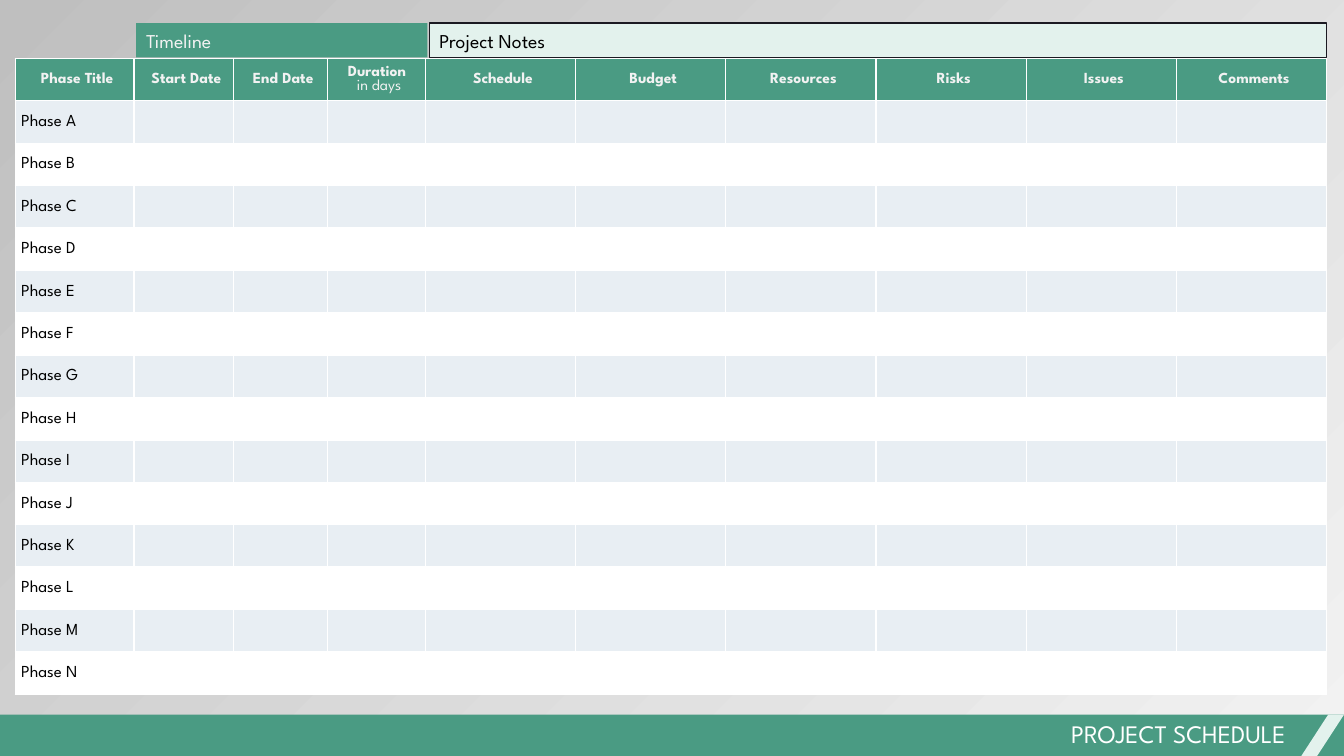
from pptx import Presentation
from pptx.dml.color import RGBColor
from pptx.enum.shapes import MSO_SHAPE as SHAPE
from pptx.enum.text import MSO_ANCHOR as ANCHOR, MSO_AUTO_SIZE as AUTO_SIZE, PP_ALIGN as ALIGN
from pptx.oxml.ns import qn
from pptx.util import Inches, Pt
from lxml.etree import SubElement

COLORS = {
    "green": "4A9B83",
    "mint": "E3F2ED",
    "band": "E8EEF3",
    "white": "FFFFFF",
    "pale": "F2F2F2",
    "gray": "BFBFBF",
    "black": "000000",
    "ink": "1B1A22",
}
FONT = "League Spartan"


def rgb(name):
    return RGBColor.from_string(COLORS[name])


def write(paragraph, text, size, color, align, bold=False):
    paragraph.alignment = align
    run = paragraph.add_run()
    run.text = text
    style = {"name": FONT, "size": Pt(size), "bold": bold}
    for attribute, value in style.items():
        setattr(run.font, attribute, value)
    run.font.color.rgb = rgb(color)


deck = Presentation()
deck.slide_width, deck.slide_height = Inches(13.33), Inches(7.5)
slide = deck.slides.add_slide(deck.slide_layouts[6])

backdrop = slide.background.fill
backdrop.gradient()
backdrop.gradient_angle = 135
for stop, color, position in zip(backdrop.gradient_stops, ("pale", "gray"), (0, 1)):
    stop.color.rgb = rgb(color)
    stop.position = position

footer = slide.shapes.add_shape(SHAPE.RECTANGLE, 0, Inches(7.09), Inches(13.33), Inches(0.42))
slash = slide.shapes.add_shape(SHAPE.PARALLELOGRAM, Inches(12.9), Inches(7.09), Inches(0.43), Inches(0.42))
slash.adjustments[0] = 0.65
for part, color in ((footer, "green"), (slash, "mint")):
    part.shadow.inherit = False
    part.fill.solid()
    part.fill.fore_color.rgb = rgb(color)
    part.line.fill.background()

title = slide.shapes.add_textbox(Inches(5.25), Inches(7.08), Inches(7.6), Inches(0.4)).text_frame
title.word_wrap = True
title.auto_size = AUTO_SIZE.SHAPE_TO_FIT_TEXT
write(title.paragraphs[0], "PROJECT SCHEDULE", 18, "white", ALIGN.RIGHT)

headings = ["Phase Title", "Start Date", "End Date", "Duration ", "Schedule",
            "Budget", "Resources", "Risks", "Issues", "Comments"]
widths = [1.18, 0.99, 0.93, 0.97] + [1.49] * 6
phases = [f"Phase {letter}" for letter in "ABCDEFGHIJKLMN"]
schedule = slide.shapes.add_table(
    len(phases) + 1, len(headings), Inches(0.15), Inches(0.58), Inches(13), Inches(6.31)).table
for column, width in zip(schedule.columns, widths):
    column.width = Inches(width)

margins = {"margin_left": 0.06, "margin_top": 0.01, "margin_right": 0.01, "margin_bottom": 0}
for r, row in enumerate(schedule.rows):
    row.height = Inches(6.31 / 15)
    for c, cell in enumerate(row.cells):
        for margin, value in margins.items():
            setattr(cell, margin, Inches(value))
        cell.vertical_anchor = ANCHOR.MIDDLE
        properties = cell._tc.get_or_add_tcPr()
        for side in ("a:lnL", "a:lnR", "a:lnT", "a:lnB"):
            border = SubElement(properties, qn(side), w=str(Pt(1)))
            SubElement(SubElement(border, qn("a:solidFill")), qn("a:srgbClr"), val=COLORS["white"])
        cell.fill.solid()
        cell.fill.fore_color.rgb = rgb("green" if r == 0 else "band" if r % 2 else "white")
        paragraph = cell.text_frame.paragraphs[0]
        if r == 0:
            write(paragraph, headings[c], 11, "pale", ALIGN.CENTER, True)
            if headings[c] == "Duration ":
                paragraph.add_line_break()
                write(paragraph, "in days", 11, "pale", ALIGN.CENTER)
        elif c == 0:
            write(paragraph, phases[r - 1], 12, "black", ALIGN.LEFT)
        else:
            paragraph.font.size = Pt(12)

groups = [
    ("Timeline", 1.35, 2.89, "green", "pale", None),
    ("Project Notes", 4.26, 8.9, "mint", "black", "ink"),
]
for label, left, width, fill, color, outline in groups:
    group = slide.shapes.add_shape(
        SHAPE.RECTANGLE, Inches(left), Inches(0.23), Inches(width), Inches(0.34))
    group.shadow.inherit = False
    group.fill.solid()
    group.fill.fore_color.rgb = rgb(fill)
    if outline:
        group.line.color.rgb = rgb(outline)
        group.line.width = Pt(1)
    else:
        group.line.fill.background()
    group.text_frame.word_wrap = True
    group.text_frame.auto_size = AUTO_SIZE.SHAPE_TO_FIT_TEXT
    write(group.text_frame.paragraphs[0], label, 14, color, ALIGN.LEFT)

deck.save("out.pptx")
